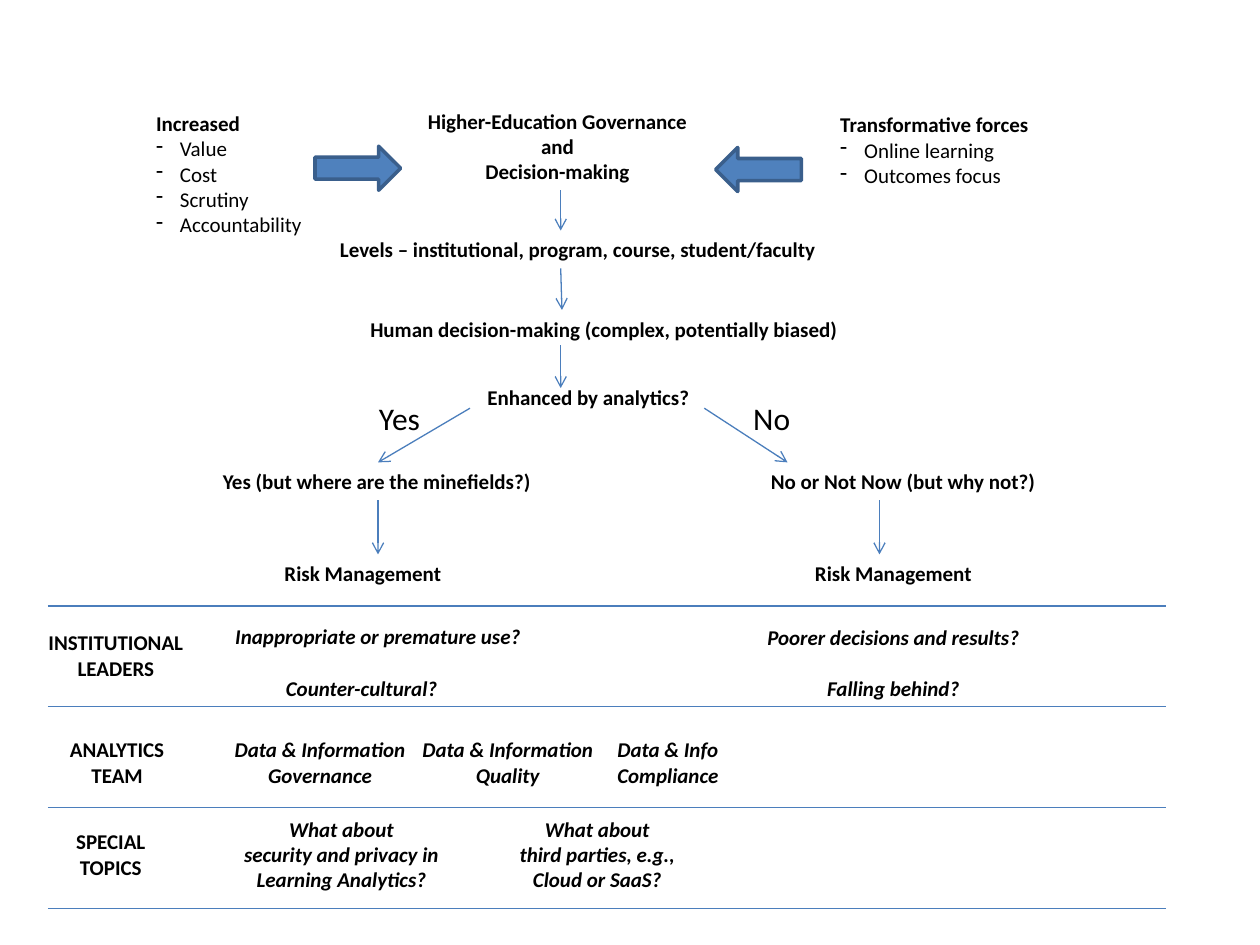
import pptx
import pptx.util
import pptx.dml.color
import pptx.enum.shapes
import pptx.enum.text
import pptx.oxml.ns
from lxml import etree

PX = 9144  # 100 px to the inch
LINE_BLUE = "4B7EBC"
LEFT = pptx.enum.text.PP_ALIGN.LEFT
CENTER = pptx.enum.text.PP_ALIGN.CENTER


def px(length):
    return pptx.util.Emu(round(length * PX))


def color(hex_code):
    return pptx.dml.color.RGBColor.from_string(hex_code)


def add_dash(paragraph):
    properties = paragraph._p.get_or_add_pPr()
    properties.set("marL", str(px(19)))
    properties.set("indent", str(-px(19)))
    bullet = etree.SubElement(properties, pptx.oxml.ns.qn("a:buChar"))
    bullet.set("char", "-")


def add_label(slide, left, top, width, lines, align=LEFT, size=12, bold=True,
              italic=False, wrap=False, dashed=False, gap=0):
    """Text at the given place; dashed makes all lines but the first a list."""
    height = 10 + len(lines) * size * 1.7
    box = slide.shapes.add_textbox(px(left), px(top), px(width), px(height))
    frame = box.text_frame
    frame.word_wrap = wrap
    frame.auto_size = pptx.enum.text.MSO_AUTO_SIZE.SHAPE_TO_FIT_TEXT
    for index, line in enumerate(lines):
        paragraph = frame.paragraphs[0] if index == 0 else frame.add_paragraph()
        listed = dashed and index > 0
        if listed:
            add_dash(paragraph)
        paragraph.text = line
        paragraph.alignment = align
        if index and gap:
            paragraph.space_before = pptx.util.Pt(gap)
        paragraph.font.name = "Calibri"
        paragraph.font.size = pptx.util.Pt(size)
        paragraph.font.bold = bold and not listed
        paragraph.font.italic = italic
        paragraph.font.color.rgb = color("000000")


def add_line(slide, start, end, arrow=True):
    line = slide.shapes.add_connector(
        pptx.enum.shapes.MSO_CONNECTOR.STRAIGHT, *map(px, start + end))
    line.line.color.rgb = color(LINE_BLUE)
    line.line.width = pptx.util.Pt(0.75)
    qn = pptx.oxml.ns.qn
    if arrow:
        etree.SubElement(line.line._get_or_add_ln(), qn("a:tailEnd")).set("type", "arrow")
    etree.SubElement(line._element.spPr, qn("a:effectLst"))


def add_force(slide, box, lines, arrow_offset, rotation):
    """A list of pressures and the block arrow that leads from it."""
    left, top, width = box
    add_label(slide, left, top, width, lines, dashed=True)
    arrow = slide.shapes.add_shape(
        pptx.enum.shapes.MSO_SHAPE.RIGHT_ARROW,
        px(left + arrow_offset), px(top + 33), px(68), px(35))
    arrow.rotation = rotation
    arrow.shadow.inherit = False
    arrow.fill.solid()
    arrow.fill.fore_color.rgb = color("4F81BD")
    arrow.line.color.rgb = color("3A5F8C")
    arrow.line.width = pptx.util.Pt(2)


def add_decision_flow(slide, box):
    left, top = box
    add_label(slide, left + 66, top, 233,
              ["Higher-Education Governance", "and", "Decision-making"], CENTER)
    steps = [
        (0, 102, 403, "Levels – institutional, program, course, student/faculty"),
        (24, 165, 398, "Human decision-making (complex, potentially biased)"),
        (117, 219, 182, "Enhanced by analytics?"),
    ]
    for dx, dy, width, step in steps:
        add_label(slide, left + dx, top + dy, width, [step])
    axis = left + 185
    for start, end, drift in [(70, 102, 0), (132, 165, 1), (193, 227, 0)]:
        add_line(slide, (axis, top + start), (axis + drift, top + end))


def add_branch(slide, box, answer, outcome, fork, axis, risk_left):
    """One answer: its fork (two x positions), outcome and risk management.

    All x positions count from the left of the box.
    """
    left, top, width = box
    answer_left, answer_width, answer_text = answer
    fork_start, fork_end = fork
    add_line(slide, (left + fork_start, top + 12), (left + fork_end, top + 55))
    add_label(slide, left + answer_left, top, answer_width, [answer_text],
              size=18, bold=False)
    add_label(slide, left, top + 55, width, [outcome])
    add_line(slide, (left + axis, top + 85), (left + axis, top + 128))
    add_label(slide, left + risk_left, top + 128, 146, ["Risk Management"])


def add_bands(slide, box, bands):
    """Ruled rows, each with a centred heading and its questions."""
    left, top, width, pitch = box
    for index in range(len(bands) + 1):
        y = top + index * pitch
        add_line(slide, (left, y), (left + width, y), arrow=False)
    for index, (heading, heading_center, heading_dy, questions) in enumerate(bands):
        y = top + index * pitch
        add_label(slide, left + heading_center - 67, y + heading_dy, 134,
                  heading, CENTER)
        for dx, dy, question_width, lines, options in questions:
            add_label(slide, left + dx, y + dy, question_width, lines, CENTER,
                      italic=True, **options)


def main():
    deck = pptx.Presentation()
    deck.slide_width, deck.slide_height = px(1000), px(750)
    slide = deck.slides.add_slide(deck.slide_layouts[6])

    add_force(slide, (114, 83, 136),
              ["Increased", "Value", "Cost", "Scrutiny", "Accountability"], 136, 0)
    add_force(slide, (657, 84, 171),
              ["Transformative forces", "Online learning", "Outcomes focus"], -89, 180)
    add_decision_flow(slide, (260, 81))
    add_branch(slide, (167, 312, 267), (124, 53, "Yes"),
               "Yes (but where are the minefields?)", (206, 133), 133, 49)
    add_branch(slide, (602, 312, 233), (-14, 50, "No"),
               "No or Not Now (but why not?)", (-43, 23), 96, 35)

    wrapped = {"wrap": True}
    add_bands(slide, (38, 481, 887, 80), [
        (["INSTITUTIONAL", "LEADERS"], 54, 14, [
            (137, 9, 250, ["Inappropriate or premature use?"], {}),
            (178, 50, 142, ["Counter-cultural?"], {}),
            (559, 10, 224, ["Poorer decisions and results?", "Falling behind?"],
             {"gap": 14.6}),
        ]),
        (["ANALYTICS", "TEAM"], 55, 19, [
            (137, 19, 158, ["Data & Information", "Governance"], {}),
            (286, 19, 158, ["Data & Information", "Quality"], {}),
            (441, 19, 102, ["Data & Info", "Compliance"], {}),
        ]),
        (["SPECIAL", "TOPICS"], 50, 12, [
            (137, 2, 192, ["What about", "security and privacy in",
                           "Learning Analytics?"], wrapped),
            (355, 2, 162, ["What about", "third parties, e.g., Cloud or SaaS?"],
             wrapped),
        ]),
    ])
    deck.save("out.pptx")


if __name__ == "__main__":
    main()
